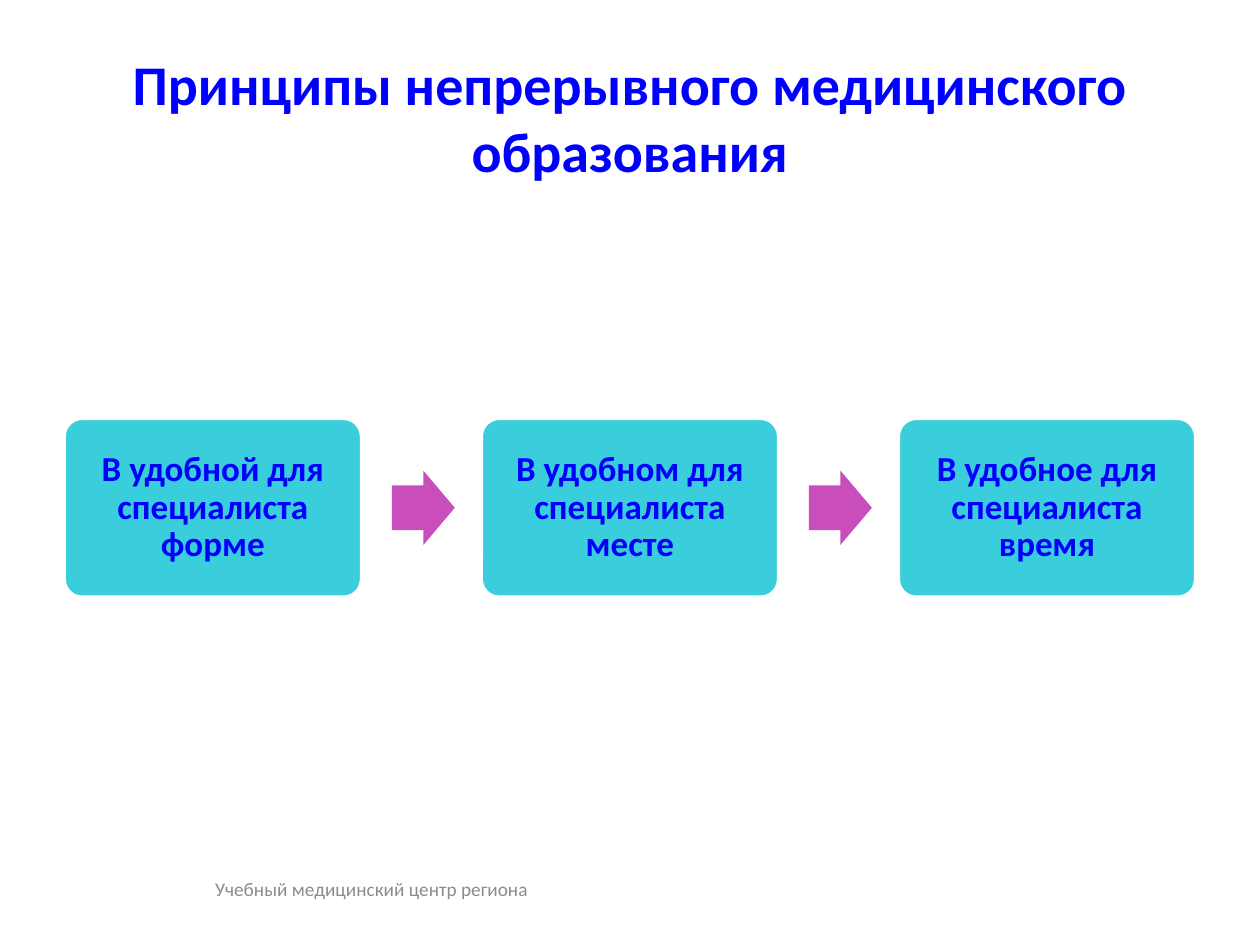
"""Build a slide with three principles joined by arrows."""
import pptx
import pptx.util
import pptx.dml.color
import pptx.enum.shapes
import pptx.enum.text

Inches = pptx.util.Inches
Pt = pptx.util.Pt
MSO_SHAPE = pptx.enum.shapes.MSO_SHAPE
MSO_ANCHOR = pptx.enum.text.MSO_ANCHOR
PP_ALIGN = pptx.enum.text.PP_ALIGN

COLORS = {
    "text": "0000FF",
    "box": "3ACDDC",
    "outline": "FFFFFF",
    "arrow": "C94DBA",
    "footer": "8C8C8C",
}
PRINCIPLES = [
    "В удобной для специалиста форме",
    "В удобном для специалиста месте",
    "В удобное для специалиста время",
]
LEFT, PITCH = 0.51, 3.31
BOX_TOP, BOX_W, BOX_H = 3.32, 2.36, 1.42
ARROW_OFFSET, ARROW_W, ARROW_H = 2.6, 0.5, 0.59


def rgb(name):
    """Return the named colour."""
    return pptx.dml.color.RGBColor.from_string(COLORS[name])


def write(tf, text, size, color, bold=False, align=PP_ALIGN.CENTER):
    """Put one formatted run into the first paragraph and return the paragraph."""
    tf.word_wrap = True
    p = tf.paragraphs[0]
    p.alignment = align
    r = p.add_run()
    r.text = text
    r.font.name = "Calibri"
    r.font.size = Pt(size)
    r.font.bold = bold
    r.font.color.rgb = rgb(color)
    return p


def add_title(s, text):
    """Place and fill the title placeholder."""
    sp = s.shapes.title
    sp.left, sp.top = Inches(0.5), Inches(0.3)
    sp.width, sp.height = Inches(9), Inches(1.25)
    sp.text_frame.vertical_anchor = MSO_ANCHOR.MIDDLE
    write(sp.text_frame, text, 32, "text", bold=True)


def add_filled(s, kind, x, y, w, h, fill, adjustments):
    """Add a flat preset shape without an outline."""
    sp = s.shapes.add_shape(kind, Inches(x), Inches(y), Inches(w), Inches(h))
    sp.shadow.inherit = False
    sp.fill.solid()
    sp.fill.fore_color.rgb = rgb(fill)
    sp.line.fill.background()
    for i, value in enumerate(adjustments):
        sp.adjustments[i] = value
    return sp


def add_principle(s, x, text):
    """Add a rounded box holding one principle."""
    sp = add_filled(s, MSO_SHAPE.ROUNDED_RECTANGLE, x, BOX_TOP, BOX_W, BOX_H, "box", [0.1])
    sp.line.color.rgb = rgb("outline")
    sp.line.width = Pt(2)
    tf = sp.text_frame
    tf.vertical_anchor = MSO_ANCHOR.MIDDLE
    tf.margin_left = tf.margin_right = tf.margin_top = tf.margin_bottom = Inches(0.12)
    p = write(tf, text, 20, "text", bold=True)
    p.line_spacing = 0.9


def add_arrow(s, x):
    """Add an arrow centred on the height of the boxes."""
    y = BOX_TOP + (BOX_H - ARROW_H) / 2
    add_filled(s, MSO_SHAPE.RIGHT_ARROW, x, y, ARROW_W, ARROW_H, "arrow", [0.6, 0.5])


def add_footer(s, text):
    """Add the right-aligned footer line."""
    sp = s.shapes.add_textbox(Inches(0.67), Inches(6.95), Inches(3.62), Inches(0.4))
    tf = sp.text_frame
    tf.vertical_anchor = MSO_ANCHOR.TOP
    tf.margin_top = Inches(0.01)
    write(tf, text, 11, "footer", align=PP_ALIGN.RIGHT)


def main():
    """Build and save the slide."""
    prs = pptx.Presentation()
    prs.slide_width, prs.slide_height = Inches(10), Inches(7.5)
    s = prs.slides.add_slide(prs.slide_layouts[5])
    add_title(s, "Принципы непрерывного медицинского образования")
    for i, text in enumerate(PRINCIPLES):
        x = LEFT + i * PITCH
        add_principle(s, x, text)
        if i < len(PRINCIPLES) - 1:
            add_arrow(s, x + ARROW_OFFSET)
    add_footer(s, "Учебный медицинский центр региона")
    prs.save("out.pptx")


if __name__ == "__main__":
    main()
